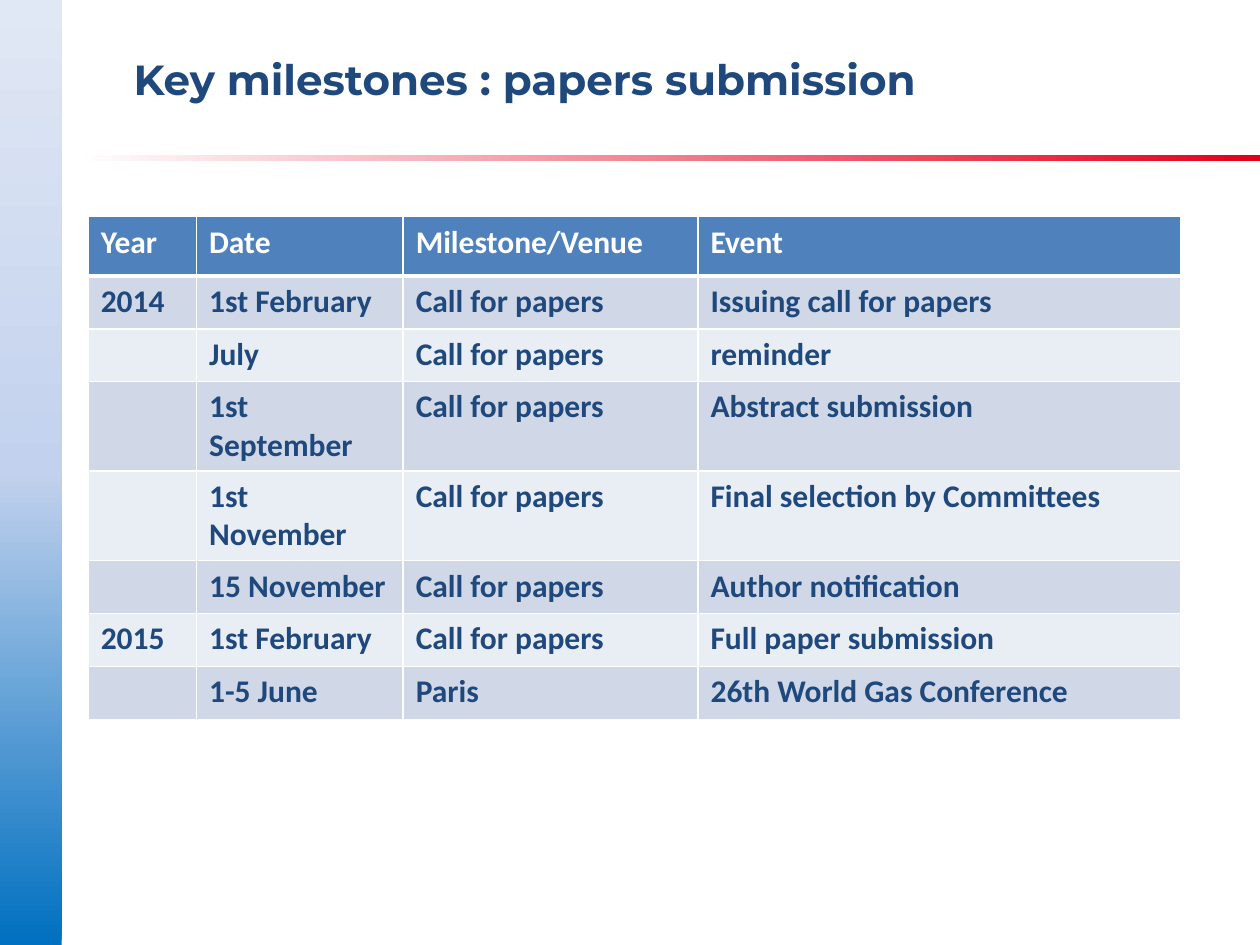
from lxml.etree import SubElement
from pptx import Presentation
from pptx.dml.color import RGBColor
from pptx.enum.shapes import MSO_SHAPE
from pptx.enum.text import MSO_ANCHOR, MSO_AUTO_SIZE, PP_ALIGN
from pptx.oxml.ns import qn
from pptx.util import Inches, Pt

NAVY, WHITE, HEADER_BLUE = "1F497D", "FFFFFF", "4F81BD"
BANDS = ("D0D8E8", "E9EDF4")
COLUMN_WIDTHS = (8.6, 16.4, 23.4, 38.3)
ROW_HEIGHTS = (4.7,) + (4.2,) * 7
MILESTONES = (
    ("Year", "Date", "Milestone/Venue", "Event"),
    ("2014", "1st February", "Call for papers", "Issuing call for papers"),
    ("", "July", "Call for papers", "reminder"),
    ("", "1st September", "Call for papers", "Abstract submission"),
    ("", "1st November", "Call for papers", "Final selection by Committees"),
    ("", "15 November", "Call for papers", "Author notification"),
    ("2015", "1st February", "Call for papers", "Full paper submission"),
    ("", "1-5 June", "Paris", "26th World Gas Conference"),
)


def color(value):
    return RGBColor.from_string(value)


def grid(units):
    """Convert cells of a 100 by 75 slide grid to a length."""
    return Inches(units / 10)


def write(frame, text, size=18, font="Calibri", fill=NAVY, bold=True):
    paragraph = frame.paragraphs[0]
    paragraph.alignment = PP_ALIGN.LEFT
    run = paragraph.add_run()
    run.text = text
    run.font.size = Pt(size)
    run.font.name = font
    run.font.bold = bold
    run.font.color.rgb = color(fill)


def set_borders(cell, top, bottom, side=1):
    """Draw white cell borders with the given widths in points."""
    properties = cell._tc.get_or_add_tcPr()
    for edge, width in (("L", side), ("R", side), ("T", top), ("B", bottom)):
        line = SubElement(properties, qn(f"a:ln{edge}"), w=str(Pt(width)))
        solid = SubElement(line, qn("a:solidFill"))
        SubElement(solid, qn("a:srgbClr"), val=WHITE)


class SlideBuilder:
    def __init__(self, presentation):
        self.slide = presentation.slides.add_slide(presentation.slide_layouts[5])

    def gradient_bar(self, left, top, width, height, stops, angle):
        """Add a bar; stops are (percent, colour) pairs, angle is counter-clockwise."""
        shape = self.slide.shapes.add_shape(
            MSO_SHAPE.RECTANGLE, *map(grid, (left, top, width, height)))
        shape.shadow.inherit = False
        shape.line.fill.background()
        shape.fill.gradient()
        shape.fill.gradient_angle = angle
        stop_list = shape._element.spPr.find(".//" + qn("a:gsLst"))
        for stop in list(stop_list):
            stop_list.remove(stop)
        for percent, value in stops:
            stop = SubElement(stop_list, qn("a:gs"), pos=str(percent * 1000))
            SubElement(stop, qn("a:srgbClr"), val=value)

    def title(self, text, left, top, width, height):
        title = self.slide.shapes.title
        title.left, title.top, title.width, title.height = map(
            grid, (left, top, width, height))
        self.slide.shapes._spTree.append(title._element)  # bring to front
        frame = title.text_frame
        frame.word_wrap = True
        frame.auto_size = MSO_AUTO_SIZE.NONE
        frame.vertical_anchor = MSO_ANCHOR.MIDDLE
        write(frame, text, size=24, font="Montserrat")

    def table(self, rows, left, top, widths, heights):
        table = self.slide.shapes.add_table(
            len(rows), len(widths), grid(left), grid(top),
            grid(sum(widths)), grid(sum(heights))).table
        for column, width in zip(table.columns, widths):
            column.width = grid(width)
        for row, height in zip(table.rows, heights):
            row.height = grid(height)
        for row_index, texts in enumerate(rows):
            is_header = row_index == 0
            for column_index, text in enumerate(texts):
                cell = table.cell(row_index, column_index)
                set_borders(cell, top=3 if row_index == 1 else 1,
                            bottom=3 if is_header else 1)
                cell.fill.solid()
                cell.fill.fore_color.rgb = color(
                    HEADER_BLUE if is_header else BANDS[(row_index - 1) % 2])
                if text:
                    write(cell.text_frame, text, fill=WHITE if is_header else NAVY)


def main():
    presentation = Presentation()
    presentation.slide_width, presentation.slide_height = grid(100), grid(75)
    builder = SlideBuilder(presentation)
    builder.gradient_bar(-0.4, 0, 5.3, 75,
                         ((0, "0070C0"), (50, "C2D1ED"), (100, "E1E8F5")), angle=90)
    builder.gradient_bar(5.9, 12.3, 94.1, 0.5,
                         ((0, "E3001B"), (100, WHITE)), angle=180)
    builder.title("Key milestones : papers submission", 9.6, 0, 70.2, 12.5)
    builder.table(MILESTONES, 7, 17.2, COLUMN_WIDTHS, ROW_HEIGHTS)
    presentation.save("out.pptx")


if __name__ == "__main__":
    main()
